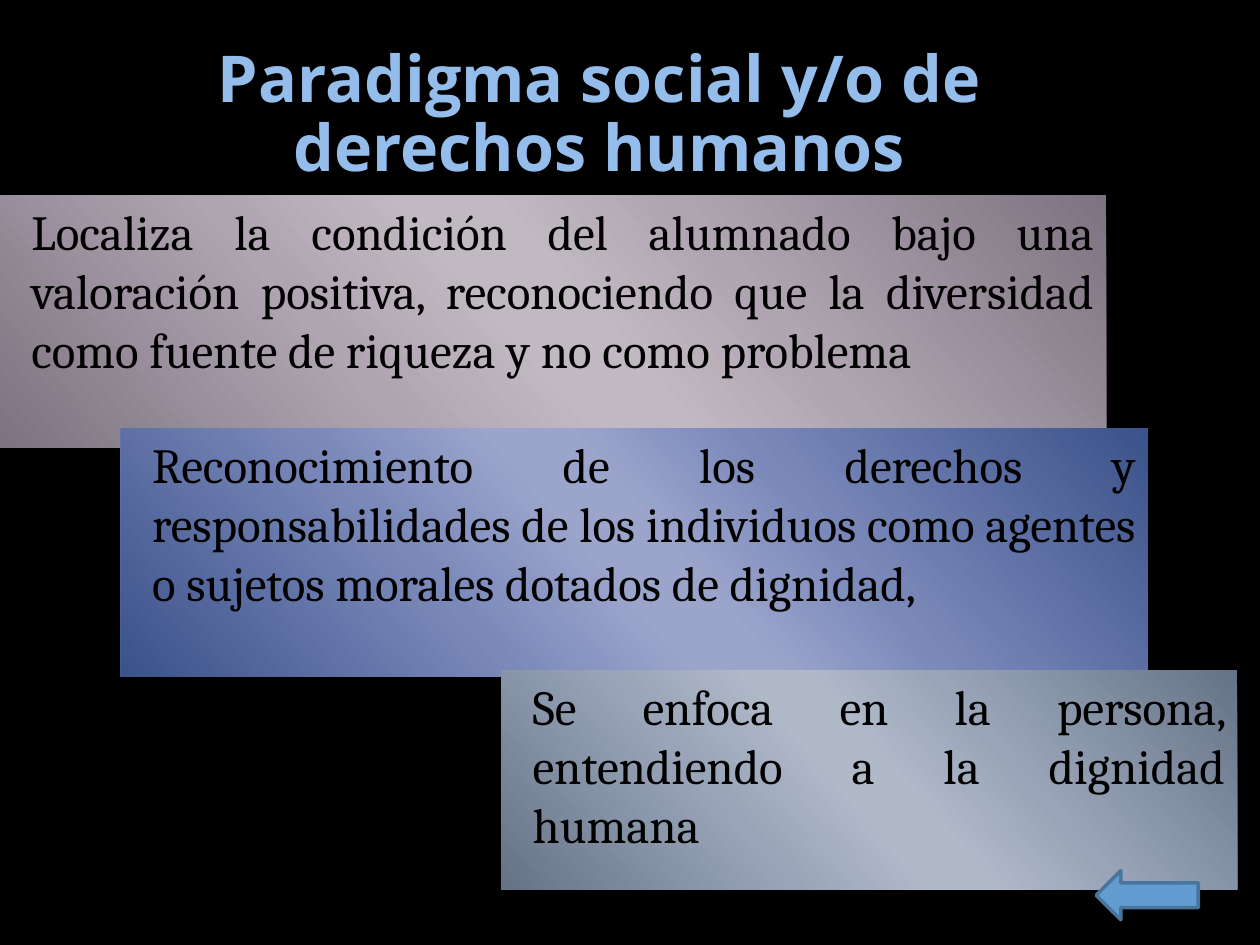
from dataclasses import dataclass

from lxml import etree
from pptx import Presentation
from pptx import util as u
from pptx.dml.color import RGBColor
from pptx.enum import shapes, text
from pptx.oxml.ns import qn


@dataclass(frozen=True)
class Theme:
    back: str = "000000"
    ink: str = "000000"
    title: str = "94BDEC"
    arrow: str = "629DD1"
    edge: str = "49749B"
    head: str = "Open Sans"
    body: str = "Cambria"
    big: float = 36.9
    size: float = 28
    angle: int = 139


@dataclass(frozen=True)
class Panel:
    words: str
    box: tuple[float, float, float, float]
    dark: str
    mid: str
    light: str


THEME = Theme()
PANELS = [
    Panel("Localiza la condición del alumnado bajo una valoración positiva, "
          "reconociendo que la diversidad como fuente de riqueza y no como problema",
          (0, 1.55, 8.78, 2), "7E7380", "AFA5B1", "C1B9C2"),
    Panel("Reconocimiento de los derechos y responsabilidades de los individuos "
          "como agentes o sujetos morales dotados de dignidad, ",
          (0.96, 3.4, 8.15, 1.97), "3B528A", "7B89BA", "9BA5CB"),
    Panel("Se enfoca en la persona, entendiendo a la dignidad humana",
          (3.98, 5.32, 5.84, 1.74), "667387", "99A4B8", "B0B9C8"),
]


def color(code: str) -> RGBColor:
    return RGBColor.from_string(code)


def place(box: tuple[float, float, float, float]) -> list[u.Length]:
    return [u.Inches(side) for side in box]


def shade(shape, panel: Panel) -> None:
    """Fill with a sheen: dark ends, light middle."""
    shape.fill.gradient()
    grad = shape.fill._xPr.find(qn("a:gradFill"))
    stops = grad.find(qn("a:gsLst"))
    for old in list(stops):
        stops.remove(old)
    tones = [(0, panel.dark), (33, panel.mid), (47, panel.light),
             (53, panel.light), (68, panel.mid), (100, panel.dark)]
    for spot, tone in tones:
        stop = etree.SubElement(stops, qn("a:gs"), pos=str(spot * 1000))
        etree.SubElement(stop, qn("a:srgbClr"), val=tone)
    lin = grad.find(qn("a:lin"))
    lin.set("ang", str(THEME.angle * 60000))
    lin.set("scaled", "0")


def write(shape, words: str, font: str, size: float, tone: str, align, anchor):
    frame = shape.text_frame
    frame.word_wrap = True
    frame.vertical_anchor = anchor
    para = frame.paragraphs[0]
    para.text = words
    para.alignment = align
    para.font.name = font
    para.font.size = u.Pt(size)
    para.font.color.rgb = color(tone)
    return para


def draw_title(slide) -> None:
    shape = slide.shapes.add_textbox(*place((0.5, 0.3, 8.52, 1.25)))
    para = write(shape, "Paradigma social y/o de derechos humanos", THEME.head,
                 THEME.big, THEME.title, text.PP_ALIGN.CENTER,
                 text.MSO_ANCHOR.MIDDLE)
    para.font.bold = True
    para.line_spacing = 0.89


def draw_panel(slide, panel: Panel) -> None:
    shape = slide.shapes.add_shape(shapes.MSO_SHAPE.RECTANGLE, *place(panel.box))
    shape.shadow.inherit = False
    shape.line.fill.background()
    shade(shape, panel)
    para = write(shape, panel.words, THEME.body, THEME.size, THEME.ink,
                 text.PP_ALIGN.JUSTIFY, text.MSO_ANCHOR.TOP)
    para.space_before = u.Pt(THEME.size * 0.2)
    props = para._p.get_or_add_pPr()
    props.set("marL", str(u.Inches(0.15)))
    props.set("indent", "0")


def draw_arrow(slide) -> None:
    shape = slide.shapes.add_shape(shapes.MSO_SHAPE.RIGHT_ARROW,
                                   *place((8.7, 6.91, 0.81, 0.39)))
    shape.rotation = 180
    shape.shadow.inherit = False
    shape.fill.solid()
    shape.fill.fore_color.rgb = color(THEME.arrow)
    shape.line.color.rgb = color(THEME.edge)
    shape.line.width = u.Pt(2)


def main() -> None:
    deck = Presentation()
    deck.slide_width, deck.slide_height = u.Inches(10), u.Inches(7.5)
    slide = deck.slides.add_slide(deck.slide_layouts[6])

    # Background
    slide.background.fill.solid()
    slide.background.fill.fore_color.rgb = color(THEME.back)

    # Title, stepped panels, back arrow
    draw_title(slide)
    for panel in PANELS:
        draw_panel(slide, panel)
    draw_arrow(slide)

    deck.save("out.pptx")


if __name__ == "__main__":
    main()
